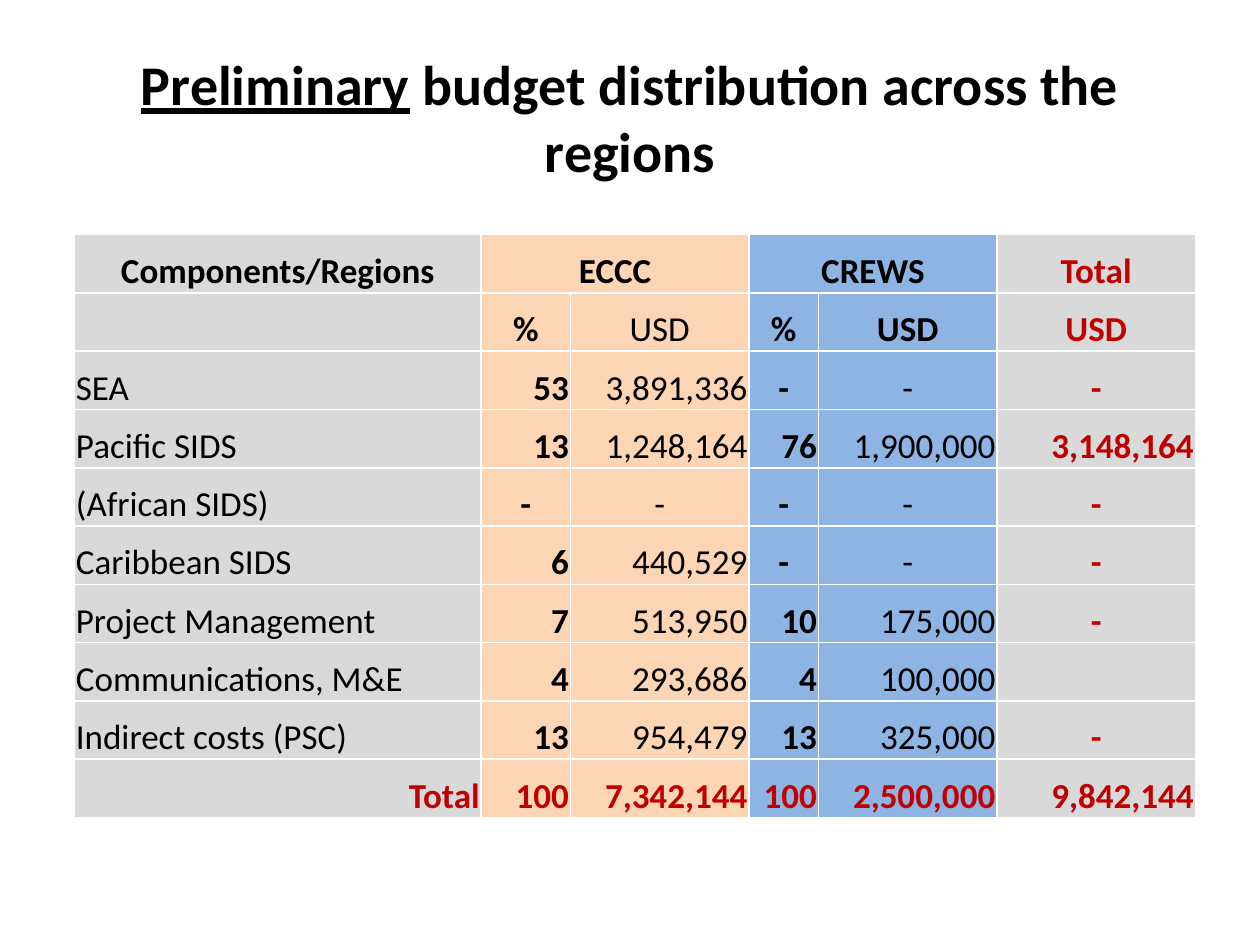
from pptx import Presentation
from pptx.dml.color import RGBColor
from pptx.enum.text import MSO_ANCHOR, PP_ALIGN
from pptx.oxml import parse_xml
from pptx.oxml.ns import nsdecls
from pptx.util import Cm, Pt

FONT = "Calibri"
HUES = {"ink": "000000", "red": "C00000", "gray": "D9D9D9",
        "peach": "FCD5B5", "blue": "8EB4E3", "line": "FFFFFF"}
FILLS = ["gray", "peach", "peach", "blue", "blue", "gray"]
WIDTHS = [8.2, 1.8, 3.6, 1.4, 3.6, 4]
ROWS = [
    ["Components/Regions", "ECCC", "", "CREWS", "", "Total"],
    ["", "%", "USD", "%", "USD", "USD"],
    ["SEA", "53", "3,891,336", "-", "-", "-"],
    ["Pacific SIDS", "13", "1,248,164", "76", "1,900,000", "3,148,164"],
    ["(African SIDS)", "-", "-", "-", "-", "-"],
    ["Caribbean SIDS", "6", "440,529", "-", "-", "-"],
    ["Project Management", "7", "513,950", "10", "175,000", "-"],
    ["Communications, M&E", "4", "293,686", "4", "100,000", ""],
    ["Indirect costs (PSC)", "13", "954,479", "13", "325,000", "-"],
    ["Total", "100", "7,342,144", "100", "2,500,000", "9,842,144"],
]
HEADS = 2
LAST = len(ROWS) - 1


def hue(name):
    """Return the named colour."""
    return RGBColor.from_string(HUES[name])


def style(font, size, color, bold):
    """Set the face, size, colour and weight of a font."""
    font.name, font.size, font.bold = FONT, Pt(size), bold
    font.color.rgb = hue(color)


def add_title(slide, left, top, width, height):
    """Place the title and underline its first word."""
    title = slide.shapes.title
    title.left, title.top, title.width, title.height = left, top, width, height
    frame = title.text_frame
    frame.word_wrap = True
    frame.vertical_anchor = MSO_ANCHOR.MIDDLE
    para = frame.paragraphs[0]
    para.text = "Preliminary"
    para.alignment = PP_ALIGN.CENTER
    para.add_run().text = " budget distribution across the regions"
    for run in para.runs:
        style(run.font, 32, "ink", True)
    para.runs[0].font.underline = True


def add_lines(cell):
    """Draw thin white borders on all four sides of a cell."""
    props = cell._tc.get_or_add_tcPr()
    for side in "LRTB":
        props.append(parse_xml(
            f'<a:ln{side} {nsdecls("a")} w="{Pt(1)}"><a:solidFill>'
            f'<a:srgbClr val="{HUES["line"]}"/></a:solidFill></a:ln{side}>'))


def align(row, col, text):
    """Choose the alignment of a cell from its place and text."""
    if row < HEADS or text == "-":
        return PP_ALIGN.CENTER
    if col == 0 and row < LAST:
        return PP_ALIGN.LEFT
    return PP_ALIGN.RIGHT


def fill_cell(cell, row, col, text):
    """Write and format one cell of the budget."""
    add_lines(cell)
    cell.fill.solid()
    cell.fill.fore_color.rgb = hue(FILLS[col])
    cell.vertical_anchor = MSO_ANCHOR.BOTTOM
    cell.margin_left = cell.margin_right = cell.margin_top = Cm(0.03)
    cell.margin_bottom = 0
    cell.text = text
    para = cell.text_frame.paragraphs[0]
    para.alignment = align(row, col, text)
    head = row < HEADS and (row, col) != (1, 2)
    bold = head or row == LAST or col in (1, 3, 5)
    color = "red" if row == LAST or col == 5 else "ink"
    for run in para.runs:
        style(run.font, 20, color, bold)


def add_budget(slide, left, top, width, height):
    """Place the budget table in the given box."""
    table = slide.shapes.add_table(
        len(ROWS), len(WIDTHS), left, top, width, height).table
    table.first_row = table.horz_banding = False
    for col, size in zip(table.columns, WIDTHS):
        col.width = int(width * size / sum(WIDTHS))
    for row, texts in enumerate(ROWS):
        for col, text in enumerate(texts):
            fill_cell(table.cell(row, col), row, col, text)
    for col in (1, 3):
        table.cell(0, col).merge(table.cell(0, col + 1))


def main():
    """Build and save the slide."""
    deck = Presentation()
    deck.slide_width, deck.slide_height = Cm(25.4), Cm(19.05)
    slide = deck.slides.add_slide(deck.slide_layouts[5])
    add_title(slide, Cm(1.27), Cm(0.76), Cm(22.86), Cm(3.18))
    add_budget(slide, Cm(1.5), Cm(4.73), Cm(22.6), Cm(11.75))
    deck.save("out.pptx")


if __name__ == "__main__":
    main()
